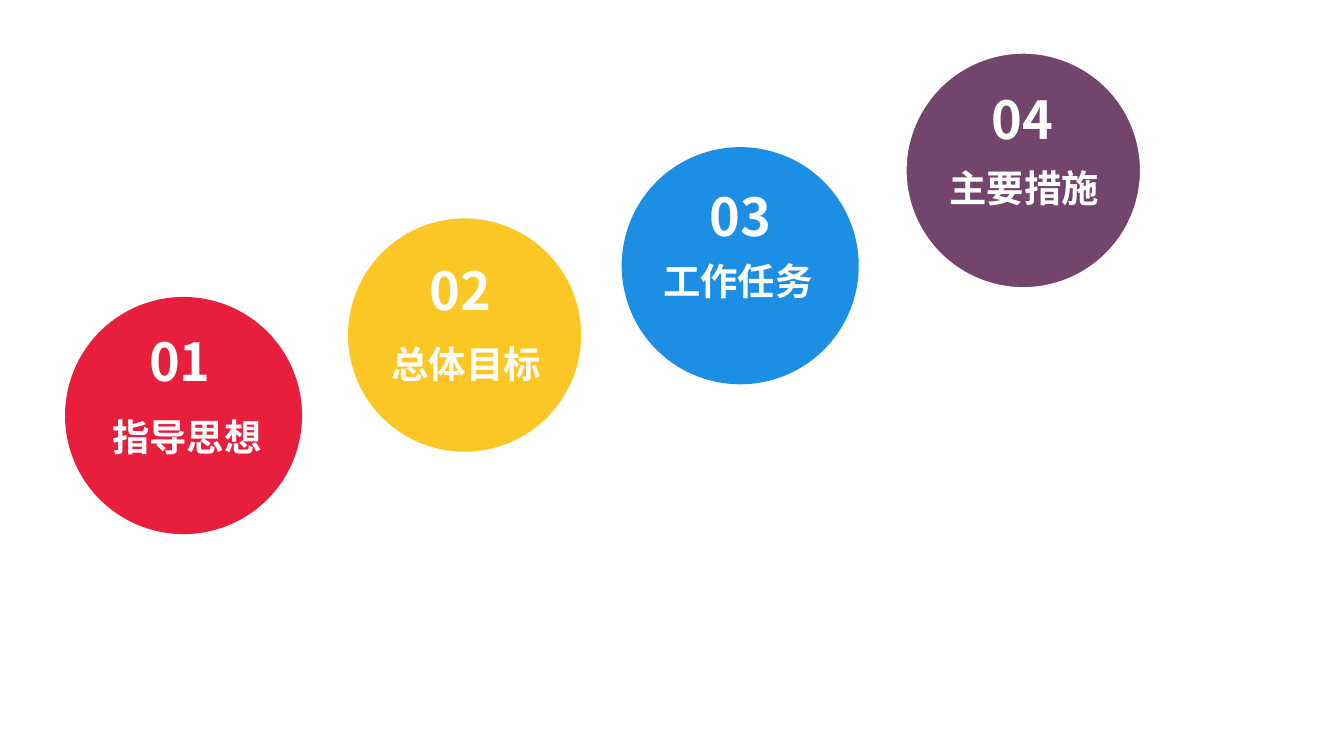
from pptx import Presentation
from pptx import util as u
from pptx.dml.color import RGBColor
from pptx.enum import shapes, text
from pptx.oxml.ns import qn
from lxml import etree

FONT = "Noto Sans CJK SC"
WHITE = RGBColor(0xFF, 0xFF, 0xFF)
RED = RGBColor(0xE7, 0x1F, 0x3C)
YELLOW = RGBColor(0xFC, 0xC7, 0x25)
BLUE = RGBColor(0x1C, 0x8E, 0xE4)
PURPLE = RGBColor(0x73, 0x44, 0x6C)
DIAMETER = u.Cm(4.48)


def add_text(parent, words, left, top, width, height, size, align):
    box = parent.shapes.add_textbox(u.Cm(left), u.Cm(top), u.Cm(width), u.Cm(height))
    box.text_frame.word_wrap = True
    box.text_frame.auto_size = text.MSO_AUTO_SIZE.SHAPE_TO_FIT_TEXT
    para = box.text_frame.paragraphs[0]
    para.alignment = align
    span = para.add_run()
    span.text = words
    span.font.size = u.Pt(size)
    span.font.bold = True
    span.font.color.rgb = WHITE
    span.font.name = FONT
    east_asian = etree.SubElement(span._r.get_or_add_rPr(), qn("a:ea"))
    east_asian.set("typeface", FONT)


deck = Presentation()
deck.slide_width = u.Cm(25.4)
deck.slide_height = u.Cm(14.28)
page = deck.slides.add_slide(deck.slide_layouts[6])

steps = [
    ("指导思想", RED, False, (1.23, 5.61), (2.57, 6.1), (1.73, 7.7)),
    ("总体目标", YELLOW, True, (6.54, 4.09), (7.87, 4.75), (7.01, 6.32)),
    ("工作任务", BLUE, False, (11.75, 2.78), (13.16, 3.35), (12.14, 4.75)),
    ("主要措施", PURPLE, True, (17.1, 0.98), (18.49, 1.52), (17.55, 3.0)),
]

for number, (label, color, outlined, circle_at, number_at, label_at) in enumerate(steps, 1):
    group = page.shapes.add_group_shape()
    circle = group.shapes.add_shape(
        shapes.MSO_SHAPE.OVAL, u.Cm(circle_at[0]), u.Cm(circle_at[1]), DIAMETER, DIAMETER)
    circle.shadow.inherit = False
    circle.fill.solid()
    circle.fill.fore_color.rgb = color
    if outlined:
        circle.line.color.rgb = WHITE
        circle.line.width = u.Pt(2)
    else:
        circle.line.fill.background()
    add_text(group, f"{number:02}", *number_at, width=1.91, height=1.45,
             size=28, align=text.PP_ALIGN.LEFT)
    add_text(group, label, *label_at, width=3.61, height=1.12,
             size=20, align=text.PP_ALIGN.CENTER)

deck.save("out.pptx")
